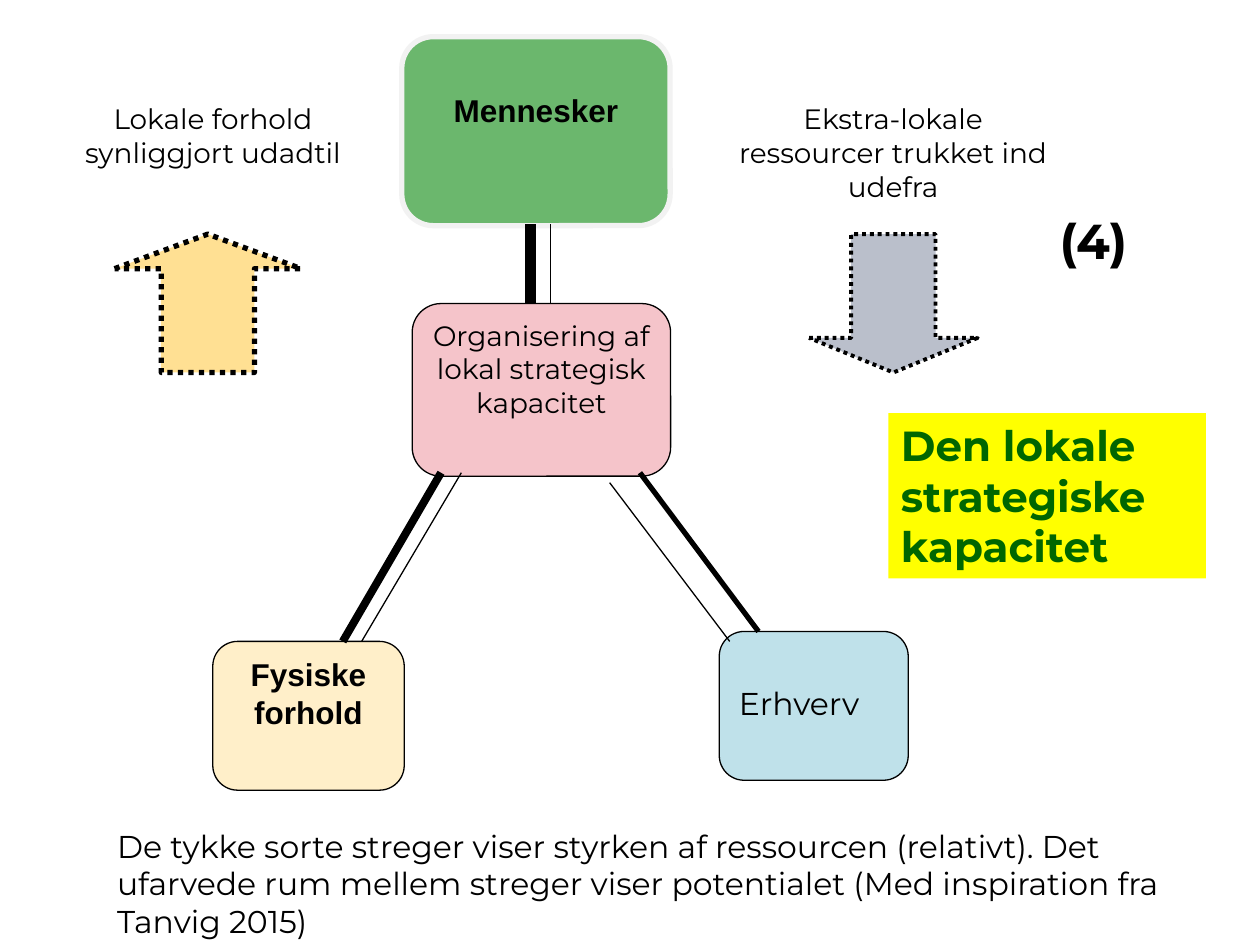
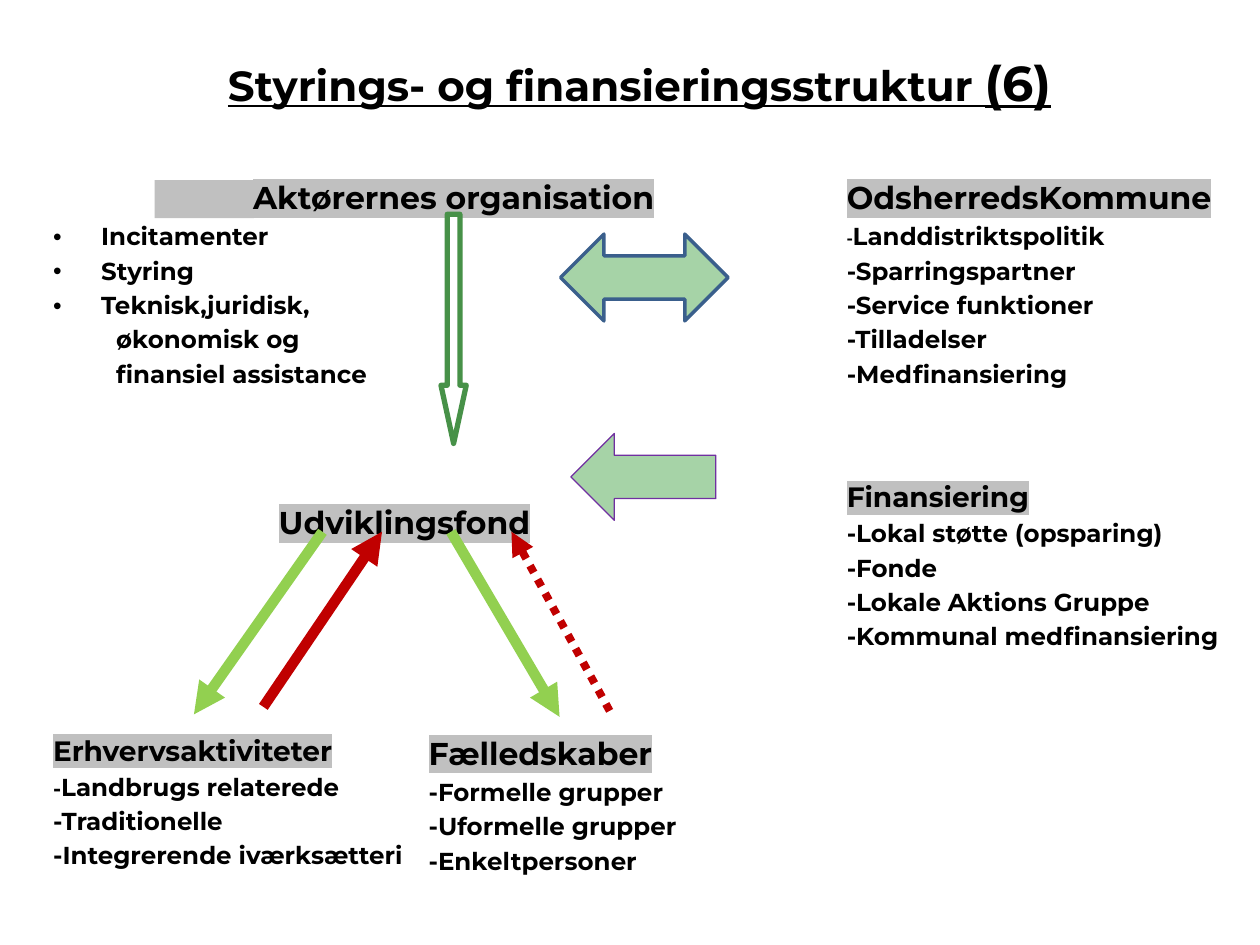
from lxml import etree
from pptx import Presentation
from pptx import util as u
from pptx.dml.color import RGBColor
from pptx.enum import dml, shapes, text
from pptx.oxml import ns

COLORS = {
    "black": "000000", "white": "FFFFFF", "frame": "F2F2F2", "gray": "C0C0C0",
    "green": "6BB76D", "cream": "FFEFC9", "sky": "BFE1EA", "rose": "F5C4CA",
    "sand": "FFE093", "steel": "BABFCB", "yellow": "FFFF00", "forest": "006600",
    "mint": "A6D3A7", "purple": "7030A0", "lime": "92D050", "red": "C00000",
    "leaf": "479148", "navy": "3A5F8C",
}
FONT = "Montserrat"
LEFT, CENTER = text.PP_ALIGN.LEFT, text.PP_ALIGN.CENTER
DOTTED = dml.MSO_LINE.ROUND_DOT
KIND = shapes.MSO_SHAPE


def rgb(name):
    return RGBColor.from_string(COLORS[name])


def lengths(values):
    return [u.Cm(v) for v in values]


def run(value, size, bold=False, color="black", font=FONT, mark=None, under=False):
    return dict(value=value, size=size, bold=bold, color=color, font=font,
                mark=mark, under=under)


def para(*runs, align=LEFT, indent=0, bullet=False):
    return dict(runs=runs, align=align, indent=indent, bullet=bullet)


def heading(value, size, **layout):
    return para(run(value, size, bold=True, mark="gray"), **layout)


def item(value, **layout):
    return para(run(value, 14, bold=True), **layout)


def dash_item(value, size, font=FONT):
    return para(run("-", size, bold=True, font=font), run(value, 14, bold=True))


class Deck:
    def __init__(self):
        self.prs = Presentation()
        self.prs.slide_width, self.prs.slide_height = u.Cm(25.4), u.Cm(19.05)
        self.s = None

    def new_slide(self):
        self.s = self.prs.slides.add_slide(self.prs.slide_layouts[6])

    def add_paras(self, tf, paras, spacing=None):
        for i, spec in enumerate(paras):
            p = tf.paragraphs[0] if i == 0 else tf.add_paragraph()
            p.alignment = spec["align"]
            if spacing:
                p.line_spacing = spacing
            pPr = p._p.get_or_add_pPr()
            if spec["indent"]:
                pPr.set("marL", str(u.Cm(spec["indent"])))
            if spec["bullet"]:
                pPr.set("indent", str(-u.Cm(spec["indent"])))
                etree.SubElement(pPr, ns.qn("a:buFont")).set("typeface", "Arial")
                etree.SubElement(pPr, ns.qn("a:buChar")).set("char", "•")
            for part in spec["runs"]:
                self.add_run(p, part)

    def add_run(self, p, part):
        r = p.add_run()
        r.text = part["value"]
        r.font.size = u.Pt(part["size"])
        r.font.bold = part["bold"]
        r.font.underline = part["under"]
        r.font.name = part["font"]
        r.font.color.rgb = rgb(part["color"])
        if part["mark"]:
            mark = etree.Element(ns.qn("a:highlight"))
            etree.SubElement(mark, ns.qn("a:srgbClr")).set("val", COLORS[part["mark"]])
            r._r.rPr.find(ns.qn("a:solidFill")).addnext(mark)

    def shape(self, kind, box, fill, line=None, width=0.75, dash=None, adj=(),
              paras=(), top=0.13):
        sp = self.s.shapes.add_shape(kind, *lengths(box))
        sp.shadow.inherit = False
        sp.fill.solid()
        sp.fill.fore_color.rgb = rgb(fill)
        if line:
            sp.line.color.rgb = rgb(line)
            sp.line.width = u.Pt(width)
            sp.line.dash_style = dash
        else:
            sp.line.fill.background()
        for i, value in enumerate(adj):
            sp.adjustments[i] = value
        tf = sp.text_frame
        tf.word_wrap = True
        tf.vertical_anchor = text.MSO_ANCHOR.TOP
        tf.margin_top = u.Cm(top)
        self.add_paras(tf, paras)

    def text(self, box, paragraph):
        tf = self.s.shapes.add_textbox(*lengths(box)).text_frame
        tf.word_wrap = True
        self.add_paras(tf, [paragraph])

    def line(self, start, end, color="black", width=0.75, dash=None, arrow=False):
        c = self.s.shapes.add_connector(
            shapes.MSO_CONNECTOR.STRAIGHT, *lengths(start + end))
        c.line.color.rgb = rgb(color)
        c.line.width = u.Pt(width)
        c.line.dash_style = dash
        spPr = c.element.spPr
        if arrow:
            ln = spPr.find(ns.qn("a:ln"))
            etree.SubElement(ln, ns.qn("a:tailEnd")).set("type", "triangle")
        etree.SubElement(spPr, ns.qn("a:effectLst"))

    def table(self, at, widths, heights, spans, cells):
        frame = self.s.shapes.add_table(
            len(heights), len(widths),
            *lengths(at + (sum(widths), sum(heights))))
        table = frame.table
        table.first_row = table.horz_banding = False
        for col, width in zip(table.columns, widths):
            col.width = u.Cm(width)
        for row, height in zip(table.rows, heights):
            row.height = u.Cm(height)
        for cell in table.iter_cells():
            cell.fill.background()
            cell.margin_left = cell.margin_right = u.Cm(0.18)
            cell.margin_top = cell.margin_bottom = 0
        for row, last in spans:
            table.cell(row, 0).merge(table.cell(row, last))
        for (row, col), (top, paras) in cells.items():
            cell = table.cell(row, col)
            cell.margin_top = u.Cm(top)
            self.add_paras(cell.text_frame, paras, spacing=1.15)


def capacity_slide(d):
    d.new_slide()
    boxes = [
        ((8.1, 0.74, 5.41, 3.81), "green", "frame", 3, 0.91, CENTER,
         run("Mennesker", 18, bold=True, font="Arial")),
        ((4.29, 12.93, 3.86, 3), "cream", "black", 0.75, 0.13, CENTER,
         run("Fysiske forhold", 18, bold=True, font="Arial")),
        ((14.5, 12.73, 3.81, 3), "sky", "black", 0.75, 0.91, LEFT,
         run("Erhverv", 18)),
        ((8.31, 6.12, 5.21, 3.48), "rose", "black", 0.75, 0.13, CENTER,
         run("Organisering af lokal strategisk kapacitet", 16)),
    ]
    for box, fill, line, width, top, align, label in boxes:
        d.shape(KIND.ROUNDED_RECTANGLE, box, fill, line, width, adj=(0.167,),
                paras=[para(label, align=align)], top=top)

    d.shape(KIND.UP_ARROW, (2.31, 4.72, 3.76, 2.79), "sand", "black", 3, DOTTED,
            (0.5, 0.25))
    d.shape(KIND.DOWN_ARROW, (16.31, 4.72, 3.4, 2.79), "steel", "black", 2.25, DOTTED,
            (0.5, 0.25))

    links = [
        ((8.89, 9.53), (6.91, 12.93), 4.5),
        ((12.9, 9.53), (15.29, 12.73), 3),
        ((12.29, 9.73), (14.71, 12.93), 0.75),
        ((7.29, 12.93), (9.3, 9.53), 0.75),
        ((10.69, 4.52), (10.69, 6.12), 6),
        ((11.1, 4.52), (11.1, 6.12), 1),
    ]
    for start, end, width in links:
        d.line(start, end, width=width)

    d.text((14.5, 1.93, 7.01, 2.31),
           para(run("Ekstra-lokale ressourcer trukket ind udefra", 16), align=CENTER))
    d.text((1.3, 1.93, 5.99, 2.31),
           para(run("Lokale forhold synliggjort udadtil", 16), align=CENTER))
    d.text((2.11, 16.54, 21.59, 2.57),
           para(run("De tykke sorte streger viser styrken af ressourcen (relativt). "
                    "Det ufarvede rum mellem streger viser potentialet "
                    "(Med inspiration fra Tanvig 2015)", 18)))
    d.shape(KIND.RECTANGLE, (17.91, 8.33, 6.4, 3.33), "yellow",
            paras=[para(run("Den lokale strategiske kapacitet", 24, bold=True,
                            color="forest"))])
    d.text((21.11, 4.11, 2.01, 1.45), para(run("(4)", 28, bold=True)))


def structure_slide(d):
    d.new_slide()
    title = para(run("Styrings- og finansieringsstruktur ", 24, bold=True, under=True),
                 run("(6)", 28, bold=True, under=True), align=CENTER)
    actors = [heading("Aktørernes organisation", 18, align=CENTER, indent=1.98)]
    actors += [item(t, indent=0.97, bullet=True)
               for t in ("Incitamenter", "Styring", "Teknisk,juridisk,")]
    actors += [item(t, indent=1.27) for t in ("økonomisk og", "finansiel assistance")]
    council = [heading("OdsherredsKommune", 18),
               dash_item("Landdistriktspolitik", 11, "Calibri")]
    council += [item(t) for t in ("-Sparringspartner", "-Service funktioner",
                                  "-Tilladelser", "-Medfinansiering")]
    funding = [heading("Finansiering", 16)]
    funding += [item(t) for t in ("-Lokal støtte (opsparing)", "-Fonde",
                                  "-Lokale Aktions Gruppe",
                                  "-Kommunal medfinansiering")]
    business = [heading("Erhvervsaktiviteter", 16),
                dash_item("Landbrugs relaterede", 12),
                item("-Traditionelle"), item("-Integrerende iværksætteri")]
    commons = [heading("Fælledskaber", 18)]
    commons += [item(t) for t in ("-Formelle grupper", "-Uformelle grupper",
                                  "-Enkeltpersoner")]

    d.shape(KIND.RECTANGLE, (3.12, 3.63, 2, 0.77), "gray")
    d.table((0.89, 0.91), (7.57, 6.96, 1.47, 8), (2.59, 5.56, 5.64, 3.78),
            [(0, 3), (1, 1), (2, 1)],
            {(0, 0): (0, [title]),
             (1, 0): (0, actors),
             (1, 3): (0, council),
             (2, 0): (0.99, [heading("Udviklingsfond", 18, align=CENTER)]),
             (2, 3): (0.53, funding),
             (3, 0): (0, business),
             (3, 1): (0, commons)})

    d.shape(KIND.LEFT_ARROW, (11.51, 8.74, 2.92, 1.75), "mint", "purple",
            adj=(0.5, 0.5))
    fund_y = 10.72
    flows = [
        ((6.5, fund_y), (3.91, 14.4), "lime", 6, None),
        ((9.09, fund_y), (11.28, 14.45), "lime", 6, None),
        ((5.31, 14.25), (7.7, fund_y), "red", 6, None),
        ((12.29, 14.33), (10.31, fund_y), "red", 4.5, DOTTED),
    ]
    for start, end, color, width, dash in flows:
        d.line(start, end, color, width, dash, arrow=True)
    d.shape(KIND.DOWN_ARROW, (8.89, 4.32, 0.51, 4.62), "white", "leaf", 3,
            adj=(0.5, 2.3))
    d.shape(KIND.LEFT_RIGHT_ARROW, (11.3, 4.72, 3.38, 1.75), "mint", "navy", 2)


def main():
    d = Deck()
    capacity_slide(d)
    structure_slide(d)
    d.prs.save("out.pptx")


if __name__ == "__main__":
    main()
